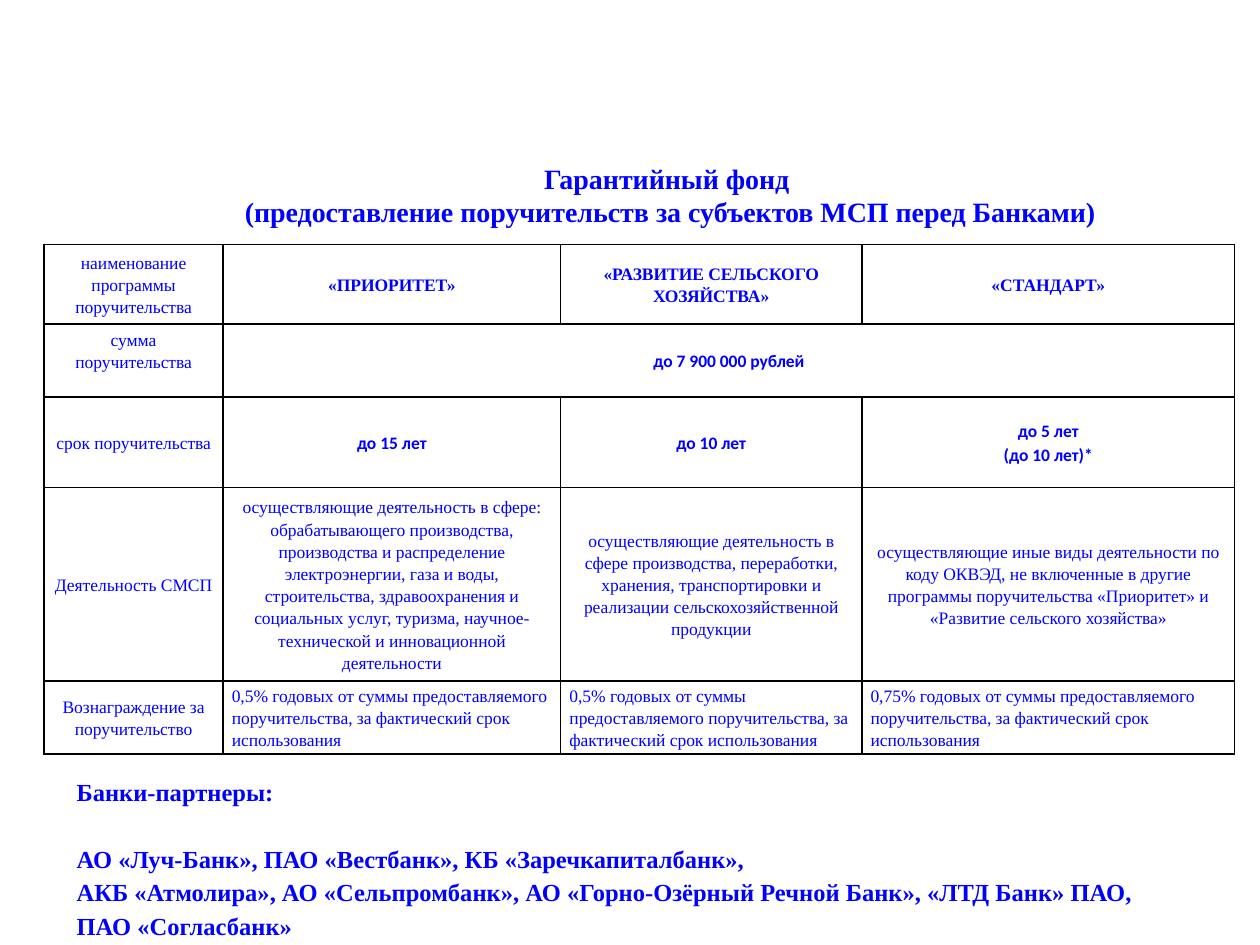
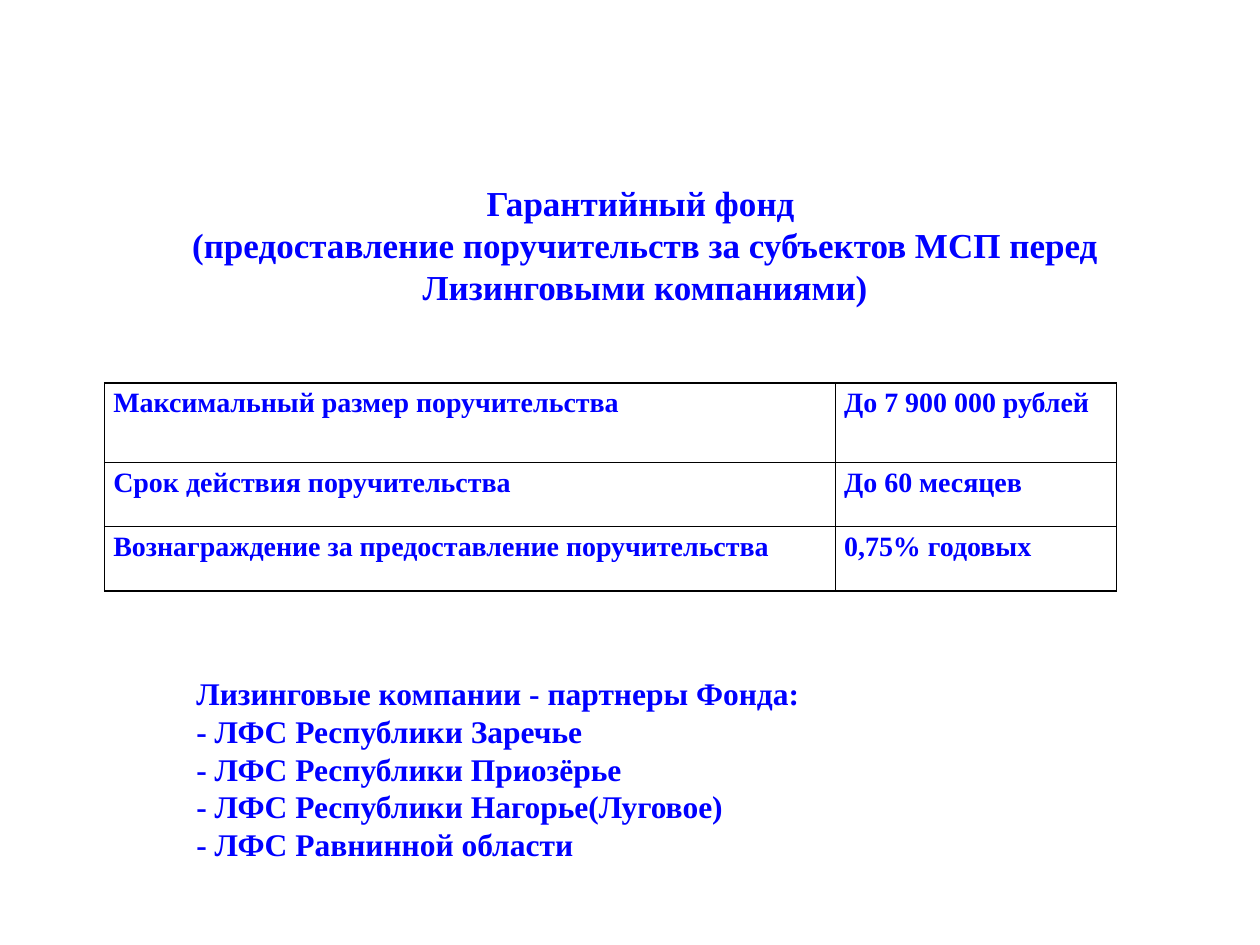
from lxml import etree
from pptx import Presentation
from pptx import util as u
from pptx.dml.color import RGBColor
from pptx.enum import text
from pptx.oxml.ns import qn

COLORS = {"text": "0000FF", "border": "000000", "paper": "FFFFFF"}
SERIF, SANS = "Times New Roman", "Calibri"
LEFT, CENTER = text.PP_ALIGN.LEFT, text.PP_ALIGN.CENTER
TOP, MIDDLE = text.MSO_ANCHOR.TOP, text.MSO_ANCHOR.MIDDLE
GRID_COLUMNS, GRID_ROWS = 100, 75
TABLE_SPACING = 1.15


class Deck:
    def __init__(self):
        self.prs = Presentation()
        self.prs.slide_width, self.prs.slide_height = u.Inches(10), u.Inches(7.5)
        self.slide = None

    def new_slide(self):
        self.slide = self.prs.slides.add_slide(self.prs.slide_layouts[6])
        fill = self.slide.background.fill
        fill.solid()
        fill.fore_color.rgb = RGBColor.from_string(COLORS["paper"])

    def x(self, columns):
        return round(self.prs.slide_width * columns / GRID_COLUMNS)

    def y(self, rows):
        return round(self.prs.slide_height * rows / GRID_ROWS)

    def style(self, frame, size, bold=True, font=SERIF, align=LEFT, spacing=1.0):
        for paragraph in frame.paragraphs:
            paragraph.alignment = align
            paragraph.line_spacing = spacing
            for run in paragraph.runs:
                run.font.size = u.Pt(size)
                run.font.bold = bold
                run.font.name = font
                run.font.color.rgb = RGBColor.from_string(COLORS["text"])

    def text(self, area, words, size, **style):
        left, top, width, height = area
        box = self.slide.shapes.add_textbox(
            self.x(left), self.y(top), self.x(width), self.y(height))
        frame = box.text_frame
        frame.word_wrap = True
        frame.text = words
        self.style(frame, size, **style)
        return frame

    def title(self, area, partners, size):
        self.text(area, "Гарантийный фонд \v(предоставление поручительств "
                  f"за субъектов МСП перед {partners})", size, align=CENTER)

    def table(self, left, top, widths, heights):
        """Add an empty, unstyled table with column and row sizes in grid units."""
        table = self.slide.shapes.add_table(
            len(heights), len(widths), self.x(left), self.y(top),
            self.x(sum(widths)), self.y(sum(heights))).table
        table.first_row = table.horz_banding = False
        for column, width in zip(table.columns, widths):
            column.width = self.x(width)
        for row, height in zip(table.rows, heights):
            row.height = self.y(height)
        for cell in table.iter_cells():
            self.border(cell)
            cell.fill.background()
        return table

    def border(self, cell):
        properties = cell._tc.get_or_add_tcPr()
        for side in ("a:lnL", "a:lnR", "a:lnT", "a:lnB"):
            line = etree.SubElement(properties, qn(side), w=str(u.Pt(1)))
            fill = etree.SubElement(line, qn("a:solidFill"))
            etree.SubElement(fill, qn("a:srgbClr"), val=COLORS["border"])

    def cell(self, cell, words, size, anchor=TOP, **style):
        cell.margin_left = cell.margin_right = u.Inches(0.07)
        cell.margin_top = cell.margin_bottom = 0
        cell.vertical_anchor = anchor
        cell.text = words
        self.style(cell.text_frame, size, spacing=TABLE_SPACING, **style)


def fee(rate):
    return (f"{rate}% годовых от суммы предоставляемого поручительства, "
            "за фактический срок использования")


PROGRAMS = [
    ["наименование\nпрограммы\nпоручительства", "«ПРИОРИТЕТ»",
     "«РАЗВИТИЕ СЕЛЬСКОГО ХОЗЯЙСТВА»", "«СТАНДАРТ»"],
    ["сумма поручительства", "до 7 900 000 рублей"],
    ["срок поручительства", "до 15 лет", "до 10 лет", "до 5 лет\n(до 10 лет)*"],
    ["Деятельность СМСП",
     "осуществляющие деятельность в сфере: обрабатывающего производства, "
     "производства и распределение электроэнергии, газа и воды, строительства, "
     "здравоохранения и социальных услуг, туризма, научное-технической и "
     "инновационной деятельности",
     "осуществляющие деятельность в сфере производства, переработки, хранения, "
     "транспортировки и реализации сельскохозяйственной продукции",
     "осуществляющие иные виды деятельности по коду ОКВЭД, не включенные в другие "
     "программы поручительства «Приоритет» и «Развитие сельского хозяйства»"],
    ["Вознаграждение за поручительство", fee("0,5"), fee("0,5"), fee("0,75")],
]
NAMES, AMOUNT, TERM, ACTIVITY, FEE = range(5)

BANKS = """Банки-партнеры:
АО «Луч-Банк», ПАО «Вестбанк», КБ «Заречкапиталбанк»,
АКБ «Атмолира», АО «Сельпромбанк», АО «Горно-Озёрный Речной Банк», «ЛТД Банк» ПАО, \
ПАО «Согласбанк»"""

LEASING_TERMS = [
    ("Максимальный размер поручительства", "До 7 900 000 рублей"),
    ("Срок действия поручительства", "До 60 месяцев"),
    ("Вознаграждение за предоставление поручительства", "0,75% годовых"),
]

LESSORS = """Лизинговые компании - партнеры Фонда:
- ЛФС Республики Заречье
- ЛФС Республики Приозёрье
- ЛФС Республики Нагорье(Луговое)
- ЛФС Равнинной области"""


def bank_guarantees(deck):
    deck.new_slide()
    deck.title((14.6, 12.3, 77.2, 6.4), "Банками", 16)

    programs = deck.table(3.5, 19.4, (14.2, 26.8, 23.9, 29.6),
                          (6.3, 5.8, 7.2, 15.3, 5.8))
    programs.cell(AMOUNT, 1).merge(programs.cell(AMOUNT, 3))
    for r, row in enumerate(PROGRAMS):
        for c, words in enumerate(row):
            value = c > 0
            deck.cell(programs.cell(r, c), words, 10, anchor=MIDDLE,
                      bold=value and r in (NAMES, AMOUNT, TERM),
                      font=SANS if value and r in (AMOUNT, TERM) else SERIF,
                      align=LEFT if value and r == FEE else CENTER)
    amount_label = programs.cell(AMOUNT, 0)
    amount_label.vertical_anchor = TOP
    amount_label.margin_top = u.Inches(0.03)

    banks = deck.text((5.1, 60.8, 89, 14.6), BANKS, 14, spacing=TABLE_SPACING)
    banks.paragraphs[1].space_before = u.Pt(19)


def leasing_guarantees(deck):
    deck.new_slide()
    deck.title((6.7, 13.9, 89, 11.1), "Лизинговыми компаниями", 20)
    deck.text((14.6, 53, 50, 16.2), LESSORS, 18)

    terms = deck.table(8.3, 30.4, (58, 22.3), (6.3, 5.1, 5.1))
    for r, row in enumerate(LEASING_TERMS):
        for c, words in enumerate(row):
            deck.cell(terms.cell(r, c), words, 16)


def main():
    deck = Deck()
    bank_guarantees(deck)
    leasing_guarantees(deck)
    deck.prs.save("out.pptx")


if __name__ == "__main__":
    main()
